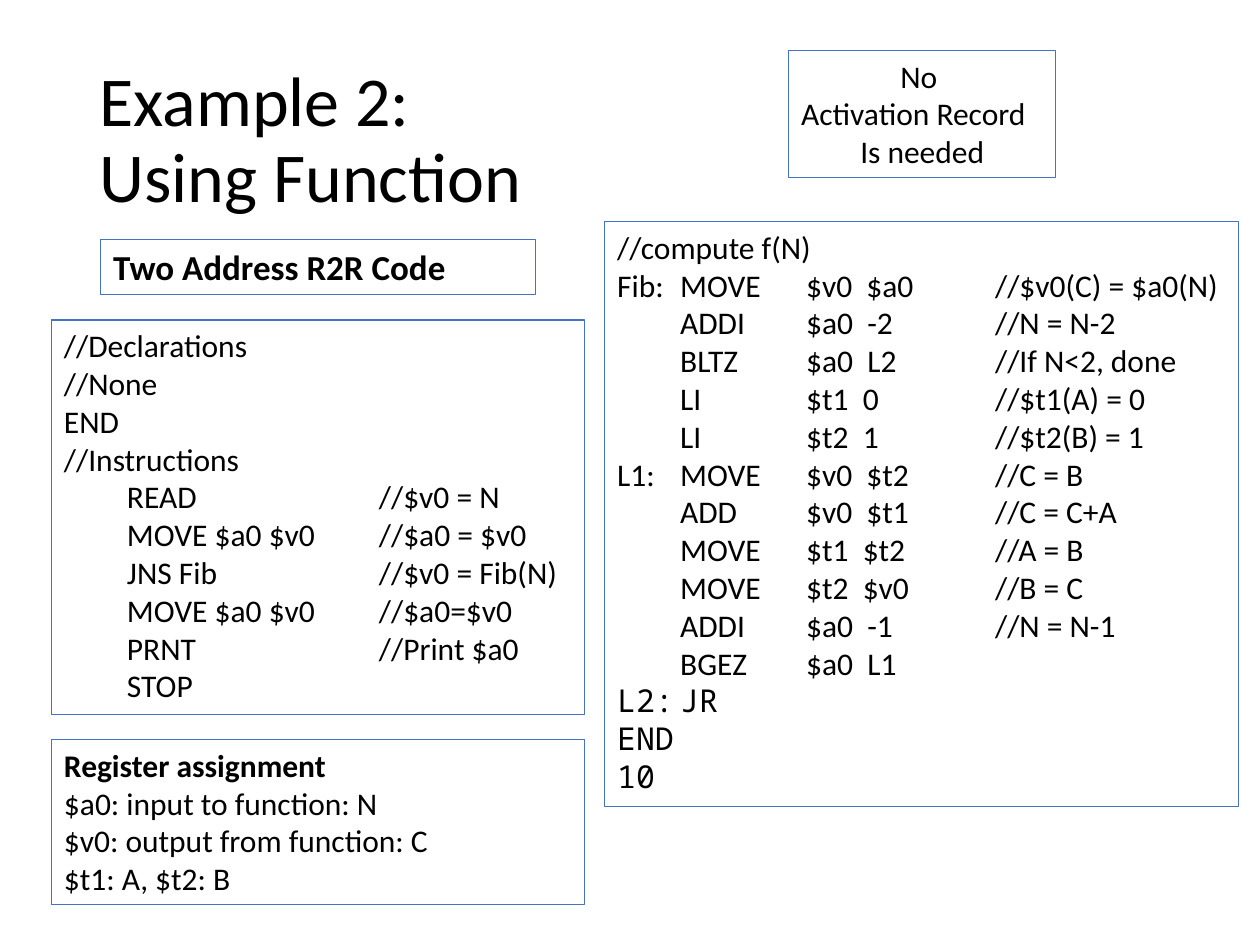
from pptx import Presentation
from pptx.dml.color import RGBColor
from pptx.enum.shapes import MSO_SHAPE as Shape
from pptx.enum.text import MSO_ANCHOR as Anchor, MSO_AUTO_SIZE as Fit, PP_ALIGN as Align
from pptx.util import Inches, Pt

BLACK = RGBColor(0x00, 0x00, 0x00)
BLUE = RGBColor(0x44, 0x72, 0xC4)
SANS = "Calibri"
MONO = "Noto Sans Mono"

MAIN = """//Declarations
//None
END
//Instructions
\tREAD\t\t\t//$v0 = N
\tMOVE $a0 $v0\t\t//$a0 = $v0
\tJNS Fib\t\t\t//$v0 = Fib(N)
\tMOVE $a0 $v0\t\t//$a0=$v0
\tPRNT\t\t\t//Print $a0
\tSTOP"""

FIB = """//compute f(N)
Fib: \tMOVE \t$v0  $a0\t\t//$v0(C) = $a0(N)
\tADDI \t$a0  -2\t\t//N = N-2
\tBLTZ \t$a0  L2\t\t//If N<2, done
\tLI \t\t$t1  0\t\t//$t1(A) = 0
\tLI \t\t$t2  1\t\t//$t2(B) = 1
L1:\tMOVE \t$v0  $t2\t\t//C = B
\tADD  \t$v0  $t1\t\t//C = C+A
\tMOVE \t$t1  $t2\t\t//A = B
\tMOVE \t$t2  $v0\t\t//B = C
\tADDI \t$a0  -1\t\t//N = N-1
\tBGEZ \t$a0  L1
L2:\tJR
END
10"""

REGS = """Register assignment
$a0: input to function: N
$v0: output from function: C
$t1: A, $t2: B"""


class Page:
    cols, rows = 100, 75
    tab = Inches(0.5)

    def __init__(self, deck):
        self.wide = deck.slide_width
        self.high = deck.slide_height
        self.slide = deck.slides.add_slide(deck.slide_layouts[5])

    def area(self, left, top, cols, rows):
        x, y = self.wide / self.cols, self.high / self.rows
        return [round(n) for n in (left * x, top * y, cols * x, rows * y)]

    def style(self, par, size, bold=False, face=SANS):
        for run in par.runs:
            font = run.font
            font.name, font.size, font.bold = face, Pt(size), bold
            font.color.rgb = BLACK

    def title(self, text, *cells):
        shape = self.slide.shapes.title
        shape.left, shape.top, shape.width, shape.height = self.area(*cells)
        frame = shape.text_frame
        frame.text = text
        frame.auto_size = Fit.NONE
        frame.vertical_anchor = Anchor.MIDDLE
        par = frame.paragraphs[0]
        par.alignment = Align.LEFT
        par.line_spacing = 0.9
        self.style(par, 40)

    def box(self, text, *cells, size=18, bold=(), mono=(), mid=()):
        shape = self.slide.shapes.add_shape(Shape.RECTANGLE, *self.area(*cells))
        shape.shadow.inherit = False
        shape.fill.background()
        shape.line.color.rgb = BLUE
        shape.line.width = Pt(0.75)
        frame = shape.text_frame
        frame.text = text
        frame.word_wrap = True
        frame.auto_size = Fit.SHAPE_TO_FIT_TEXT
        frame.vertical_anchor = Anchor.TOP
        for i, par in enumerate(frame.paragraphs):
            par.alignment = Align.CENTER if i in mid else Align.LEFT
            par._p.get_or_add_pPr().set("defTabSz", str(self.tab))
            self.style(par, size, i in bold, MONO if i in mono else SANS)


def main():
    deck = Presentation()
    deck.slide_width, deck.slide_height = Inches(10), Inches(7.5)
    page = Page(deck)
    page.title("Example 2: \vUsing Function", 6.9, 4, 86.2, 14.5)
    page.box("No \nActivation Record \nIs needed", 62.6, 4, 21.2, 10.1, mid=(0, 2))
    page.box(MAIN, 4.1, 25.4, 42.3, 31.3)
    page.box("Two Address R2R Code", 8, 19, 34.5, 4.4, size=20, bold=(0,))
    page.box(FIB, 48, 17.6, 50.3, 46.4, mono=(12, 13, 14))
    page.box(REGS, 4.1, 58.7, 42.3, 13.1, bold=(0,))
    deck.save("out.pptx")


if __name__ == "__main__":
    main()
